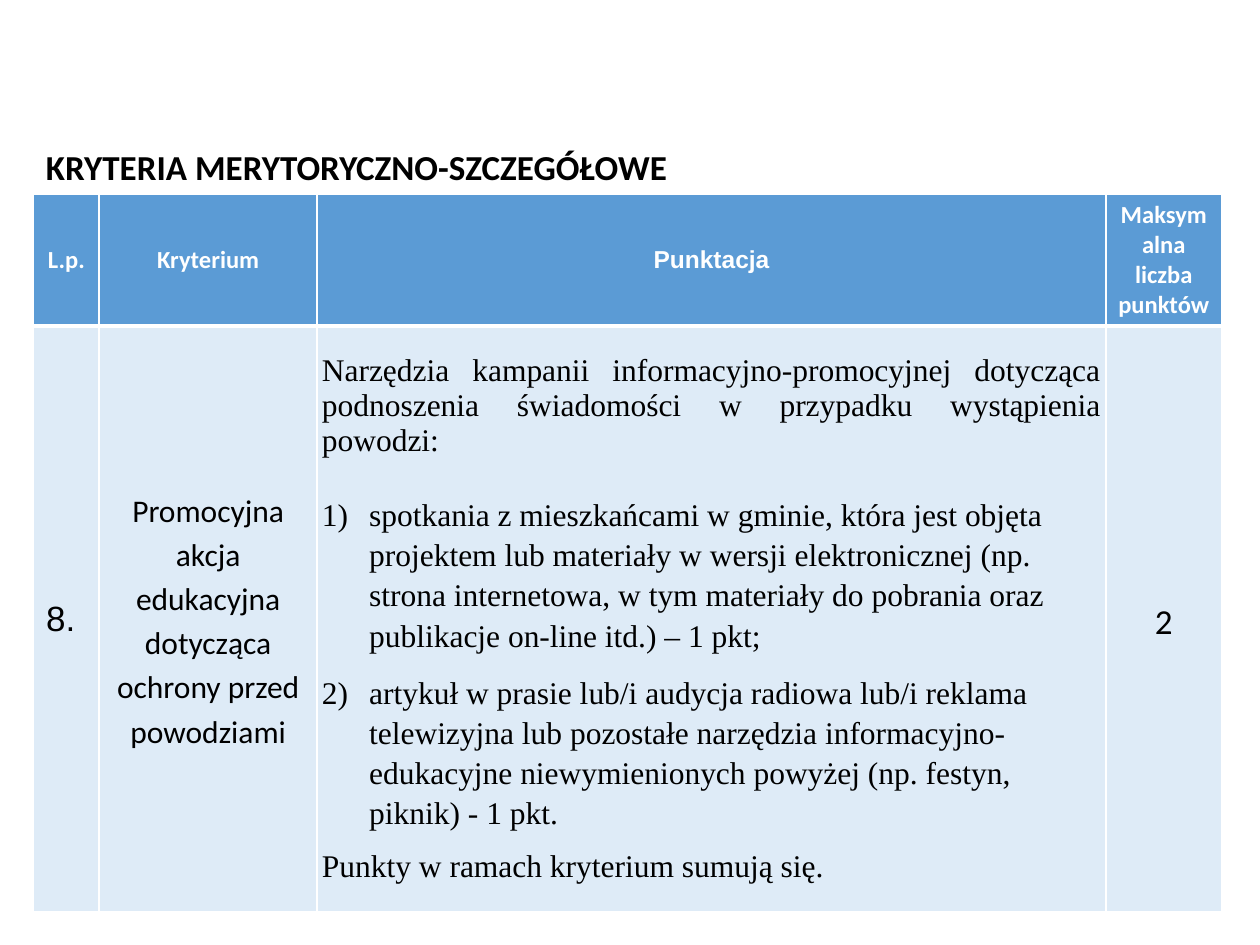
from lxml.etree import SubElement
from pptx import Presentation
from pptx.dml.color import RGBColor as Rgb
from pptx.enum.text import MSO_ANCHOR as Anchor, MSO_AUTO_SIZE as AutoSize, PP_ALIGN as Align
from pptx.oxml.ns import qn
from pptx.util import Pt

THEME = {
    "header": Rgb.from_string("5B9BD5"), "body": Rgb.from_string("DEEBF7"),
    "white": Rgb.from_string("FFFFFF"), "black": Rgb.from_string("000000"),
    "sans": "Calibri", "number": "Arial", "serif": "Times New Roman",
    "small": 14, "text": 18, "large": 20,
}

# Content: each paragraph is (text, paragraph format values)
TITLE = "KRYTERIA MERYTORYCZNO-SZCZEGÓŁOWE"
CENTRED = {"alignment": Align.CENTER}
LOOSE = {"alignment": Align.CENTER, "line_spacing": 1.15}
ITEM = {"line_spacing": 1.15, "space_after": Pt(10)}
HEADERS = [("L.p.", "sans"), ("Kryterium", "sans"), ("Punktacja", "number"),
           ("Maksymalna liczba punktów", "sans")]
SCORING = [
    ("Narzędzia kampanii informacyjno-promocyjnej dotycząca podnoszenia świadomości "
     "w przypadku wystąpienia powodzi:", {"alignment": Align.JUSTIFY, "space_after": Pt(20)}),
    ("spotkania z mieszkańcami w gminie, która jest objęta projektem lub materiały w wersji "
     "elektronicznej (np. strona internetowa, w tym materiały do pobrania oraz publikacje "
     "on-line itd.) – 1 pkt;", ITEM),
    ("artykuł w prasie lub/i audycja radiowa lub/i reklama telewizyjna lub pozostałe narzędzia "
     "informacyjno-edukacyjne niewymienionych powyżej (np. festyn, piknik) - 1 pkt.", ITEM),
    ("Punkty w ramach kryterium sumują się.", {}),
]
# Body cells: paragraphs, font, size, inset (None keeps the default)
BODY = [
    ([("8.", {})], "number", "large", None),
    ([("Promocyjna akcja edukacyjna dotycząca ochrony przed powodziami", LOOSE)],
     "sans", "text", 2.7),
    (SCORING, "serif", "text", 2.7),
    ([("2", LOOSE)], "sans", "large", 2.7),
]

LEFT, TABLE_TOP = 19.2, 110.9
COLUMNS = [37.5, 124.6, 450.7, 66.2]
ROWS = [74.2, 334.8]
HEADER_INSET = 6.5
TITLE_TOP, TITLE_WIDTH, TITLE_HEIGHT = 79.4, 372, 31.5
ITEM_INDENT = 27


def set_values(target, values):
    for name, value in values.items():
        setattr(target, name, value)


def set_margins(cell, inset, sides):
    set_values(cell, {f"margin_{side}": Pt(inset) for side in sides})


def number_paragraph(para):
    props = para._p.get_or_add_pPr()
    props.set("marL", str(Pt(ITEM_INDENT)))
    props.set("indent", str(Pt(-ITEM_INDENT)))
    SubElement(props, qn("a:buAutoNum"), type="arabicParenR")


def write(frame, paragraphs, font, size, color, bold=False):
    for index, (text, values) in enumerate(paragraphs):
        para = frame.add_paragraph() if index else frame.paragraphs[0]
        set_values(para, values)
        if values is ITEM:
            number_paragraph(para)
        span = para.add_run()
        span.text = text
        set_values(span.font, {"name": THEME[font], "size": Pt(THEME[size]), "bold": bold})
        span.font.color.rgb = THEME[color]


def style_cell(cell, fill, top, bottom):
    props = cell._tc.get_or_add_tcPr()
    for side, width in {"L": 1, "R": 1, "T": top, "B": bottom}.items():
        line = SubElement(props, qn(f"a:ln{side}"), w=str(Pt(width)))
        SubElement(SubElement(line, qn("a:solidFill")), qn("a:srgbClr"), val=str(THEME["white"]))
    cell.fill.solid()
    cell.fill.fore_color.rgb = THEME[fill]
    cell.vertical_anchor = Anchor.MIDDLE


def main():
    deck = Presentation()
    set_values(deck, {"slide_width": Pt(720), "slide_height": Pt(540)})
    page = deck.slides.add_slide(deck.slide_layouts[6])

    # Criteria table
    table = page.shapes.add_table(len(ROWS), len(COLUMNS), Pt(LEFT), Pt(TABLE_TOP),
                                  Pt(sum(COLUMNS)), Pt(sum(ROWS))).table
    for column, width in zip(table.columns, COLUMNS):
        column.width = Pt(width)
    for row, height in zip(table.rows, ROWS):
        row.height = Pt(height)
    for index, (text, font) in enumerate(HEADERS):
        cell = table.cell(0, index)
        style_cell(cell, "header", 1, 3)
        set_margins(cell, HEADER_INSET, ("left", "right"))
        write(cell.text_frame, [(text, CENTRED)], font, "small", "white", True)
    for index, (paragraphs, font, size, inset) in enumerate(BODY):
        cell = table.cell(1, index)
        style_cell(cell, "body", 3, 1)
        if inset:
            set_margins(cell, inset, ("left", "top", "right", "bottom"))
        write(cell.text_frame, paragraphs, font, size, "black")

    # Heading above the table
    box = page.shapes.add_textbox(Pt(LEFT), Pt(TITLE_TOP), Pt(TITLE_WIDTH), Pt(TITLE_HEIGHT))
    set_values(box.text_frame, {"word_wrap": False, "vertical_anchor": Anchor.MIDDLE,
                                "auto_size": AutoSize.SHAPE_TO_FIT_TEXT})
    write(box.text_frame, [(TITLE, {})], "sans", "large", "black", True)

    deck.save("out.pptx")


if __name__ == "__main__":
    main()
